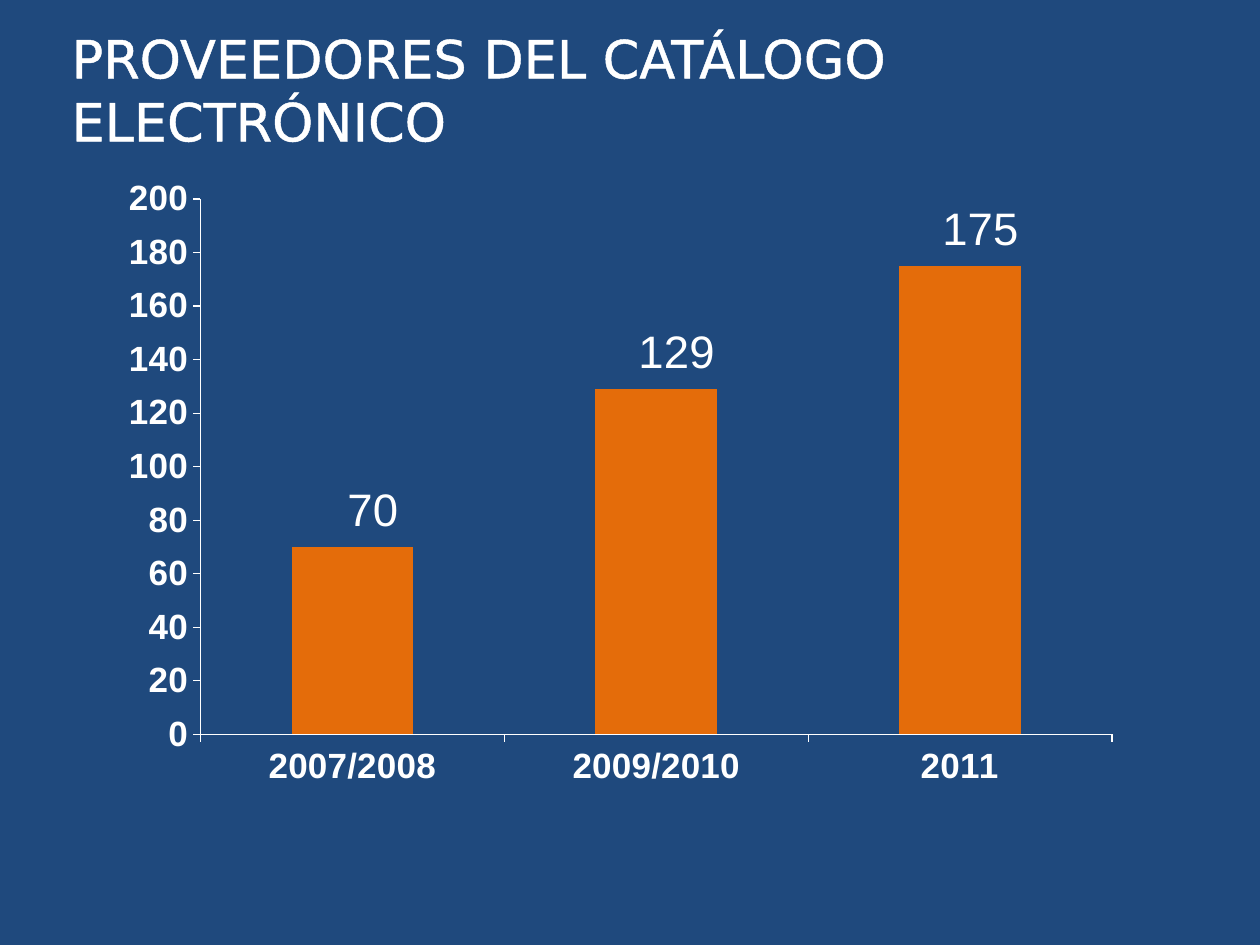
from lxml import etree
from pptx import Presentation
from pptx.chart.data import CategoryChartData
from pptx.dml.color import RGBColor
from pptx.enum.chart import XL_CHART_TYPE, XL_LABEL_POSITION, XL_TICK_MARK
from pptx.enum.text import MSO_ANCHOR
from pptx.oxml import parse_xml
from pptx.oxml.ns import nsdecls, qn
from pptx.util import Inches, Pt

COLUMNS = XL_CHART_TYPE.COLUMN_CLUSTERED
OUTSIDE_END = XL_LABEL_POSITION.OUTSIDE_END
TICK_OUT = XL_TICK_MARK.OUTSIDE
MIDDLE = MSO_ANCHOR.MIDDLE

COLORS = {"background": "1F497D", "text": "FFFFFF", "bars": "E46C0A"}
TITLE_FONT = "DejaVu Sans"
CHART_FONT = "Arial"


def manual_layout(**settings):
    """Return a c:layout element holding the given settings in order."""
    layout = parse_xml(f"<c:layout {nsdecls('c')}><c:manualLayout/></c:layout>")
    for tag, value in settings.items():
        etree.SubElement(layout[0], qn(f"c:{tag}")).set("val", str(value))
    return layout


class SlideBuilder:
    def __init__(self, slide):
        self.slide = slide

    def color(self, name):
        return RGBColor.from_string(COLORS[name])

    def style_font(self, font, name, size, bold=False):
        font.name, font.size, font.bold = name, Pt(size), bold
        font.color.rgb = self.color("text")

    def background(self):
        fill = self.slide.background.fill
        fill.solid()
        fill.fore_color.rgb = self.color("background")

    def title(self, text, left, top, width, height):
        box = self.slide.shapes.add_textbox(
            Inches(left), Inches(top), Inches(width), Inches(height))
        frame = box.text_frame
        frame.word_wrap = True
        frame.vertical_anchor = MIDDLE
        heading = frame.paragraphs[0]
        heading.text = text
        self.style_font(heading.font, TITLE_FONT, 30)
        # White outline around the letters
        for run in heading.runs:
            run._r.get_or_add_rPr().insert(0, parse_xml(
                f'<a:ln {nsdecls("a")} w="{Pt(1.45)}"><a:solidFill>'
                f'<a:srgbClr val="{COLORS["text"]}"/></a:solidFill></a:ln>'))

    def style_axis(self, axis):
        axis.has_major_gridlines = False
        axis.major_tick_mark = TICK_OUT
        axis.format.line.color.rgb = self.color("text")
        axis.format.line.width = Pt(0.75)
        self.style_font(axis.tick_labels.font, CHART_FONT, 20, bold=True)

    def column_chart(self, categories, values, left, top, width, height):
        data = CategoryChartData()
        data.categories = categories
        data.add_series("Series 1", values)
        chart = self.slide.shapes.add_chart(
            COLUMNS, Inches(left), Inches(top), Inches(width), Inches(height),
            data).chart
        chart.has_legend = False
        chart.has_title = False
        self.style_font(chart.font, CHART_FONT, 10)

        # Axes
        self.style_axis(chart.category_axis)
        self.style_axis(chart.value_axis)
        chart.value_axis.minimum_scale = 0
        chart.value_axis.maximum_scale = 200
        chart.value_axis.major_unit = 20

        # Plot area
        plot_area = chart._chartSpace.chart.plotArea
        for old_layout in plot_area.findall(qn("c:layout")):
            plot_area.remove(old_layout)
        plot_area.insert(0, manual_layout(
            layoutTarget="inner", xMode="edge", yMode="edge",
            x=0.09, y=0.05, w=0.89, h=0.85))

        # Bars
        plot = chart.plots[0]
        plot.gap_width = 150
        plot.vary_by_categories = False
        bars = plot.series[0]
        bars.format.fill.solid()
        bars.format.fill.fore_color.rgb = self.color("bars")

        # Value labels, moved slightly up and to the right
        for index in range(len(values)):
            label = bars.points[index].data_label
            self.style_font(label.font, CHART_FONT, 26)
            label.position = OUTSIDE_END
        for label_xml in bars._element.iter(qn("c:dLbl")):
            label_xml.insert(1, manual_layout(x=0.02, y=-0.01))


def main():
    deck = Presentation()
    deck.slide_width, deck.slide_height = Inches(10), Inches(7.5)
    builder = SlideBuilder(deck.slides.add_slide(deck.slide_layouts[6]))
    builder.background()
    builder.title("PROVEEDORES DEL CATÁLOGO\vELECTRÓNICO", 0.47, 0.08, 8.03, 1.25)
    builder.column_chart(["2007/2008", "2009/2010", "2011"], [70, 129, 175],
                         0.86, 1.33, 8.13, 5)
    deck.save("out.pptx")


if __name__ == "__main__":
    main()
